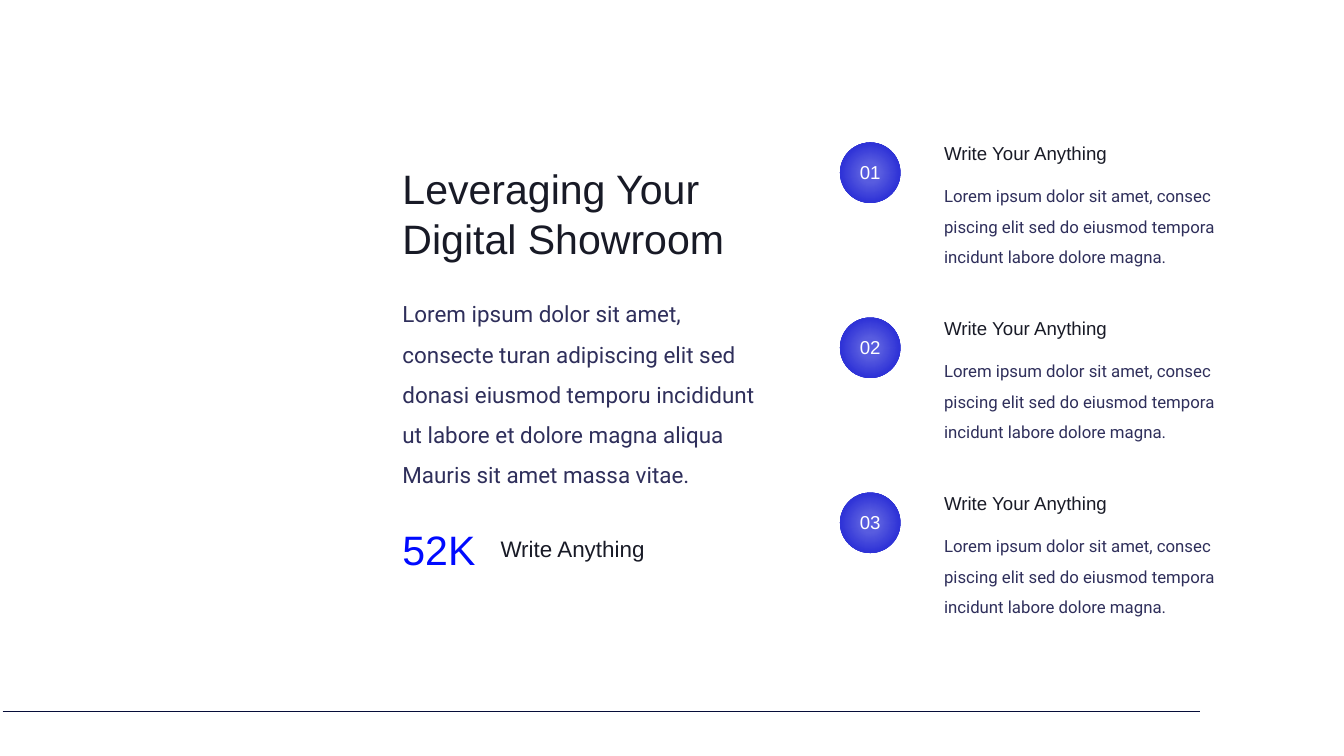
"""Build a showroom slide with a headline, a key figure and three numbered points."""
import pptx
import pptx.dml.color
import pptx.enum.shapes
import pptx.enum.text
import pptx.oxml
import pptx.oxml.ns
import pptx.util

Inches = pptx.util.Inches
RGBColor = pptx.dml.color.RGBColor
ALIGN = pptx.enum.text.PP_ALIGN

INK = RGBColor(0x18, 0x1A, 0x26)
BODY = RGBColor(0x2F, 0x2F, 0x5B)
BLUE = RGBColor(0x00, 0x0A, 0xFF)
NAVY = RGBColor(0x06, 0x0D, 0x39)
WHITE = RGBColor(0xFF, 0xFF, 0xFF)
BADGE_STOPS = [
    (0, RGBColor(0x58, 0x5C, 0xDF)),
    (23, RGBColor(0x58, 0x5C, 0xDF)),
    (69, RGBColor(0x2F, 0x33, 0xD7)),
    (97, RGBColor(0x27, 0x2C, 0xCD)),
]

HEADLINE = {"name": "Arial", "size": 44, "color": INK}
FIGURE = {"name": "Arial", "size": 44, "color": BLUE}
LABEL = {"name": "Arial", "size": 24, "color": INK}
INTRO = {"name": "Roboto", "size": 24, "color": BODY, "line_spacing": 1.5}
POINT_TITLE = {"name": "Arial", "size": 20, "color": INK}
POINT_BODY = {"name": "Roboto", "size": 18, "color": BODY, "line_spacing": 1.5}
NUMBER = {"name": "Arial", "size": 20, "color": WHITE, "alignment": ALIGN.CENTER}


def add_text(shapes, left, top, width, height, text, style):
    box = shapes.add_textbox(Inches(left), Inches(top), Inches(width), Inches(height))
    box.text_frame.word_wrap = True
    para = box.text_frame.paragraphs[0]
    span = para.add_run()
    span.text = text
    for key, value in style.items():
        if key == "color":
            span.font.color.rgb = value
        elif key == "size":
            span.font.size = pptx.util.Pt(value)
        elif key == "name":
            span.font.name = value
        else:
            setattr(para, key, value)


def fill_radial(shape, stops):
    stop_xml = "".join(
        f'<a:gs pos="{position * 1000}"><a:srgbClr val="{color}"/></a:gs>'
        for position, color in stops
    )
    gradient = pptx.oxml.parse_xml(
        f'<a:gradFill {pptx.oxml.ns.nsdecls("a")} rotWithShape="1">'
        f"<a:gsLst>{stop_xml}</a:gsLst>"
        '<a:path path="circle">'
        '<a:fillToRect l="50000" t="50000" r="50000" b="50000"/>'
        "</a:path></a:gradFill>"
    )
    properties = shape._element.spPr
    properties.find(pptx.oxml.ns.qn("a:prstGeom")).addnext(gradient)


deck = pptx.Presentation()
deck.slide_width = Inches(20)
deck.slide_height = Inches(11.25)
page = deck.slides.add_slide(deck.slide_layouts[6])
page.background.fill.solid()
page.background.fill.fore_color.rgb = WHITE

footer_rule = page.shapes.add_connector(
    pptx.enum.shapes.MSO_CONNECTOR.STRAIGHT,
    Inches(0.04), Inches(10.59), Inches(17.86), Inches(10.59),
)
footer_rule.line.color.rgb = NAVY
footer_rule.line.width = pptx.util.Pt(0.5)
footer_rule._element.spPr.append(
    pptx.oxml.parse_xml(f'<a:effectLst {pptx.oxml.ns.nsdecls("a")}/>')
)

point_text = (
    "Lorem ipsum dolor sit amet, consec piscing elit sed do eiusmod tempora "
    "incidunt labore dolore magna."
)
for index in range(3):
    top = 2.12 + index * 2.605
    group = page.shapes.add_group_shape()
    badge = group.shapes.add_shape(
        pptx.enum.shapes.MSO_SHAPE.OVAL,
        Inches(12.5), Inches(top), Inches(0.9), Inches(0.9),
    )
    badge.shadow.inherit = False
    badge.line.fill.background()
    fill_radial(badge, BADGE_STOPS)
    add_text(group.shapes, 12.5, top + 0.23, 0.9, 0.44, f"{index + 1:02d}", NUMBER)
    add_text(page.shapes, 13.95, top + 0.45, 4.87, 1.41, point_text, POINT_BODY)
    add_text(page.shapes, 13.95, top - 0.06, 4.52, 0.44, "Write Your Anything", POINT_TITLE)

intro_text = (
    "Lorem ipsum dolor sit amet, consecte turan adipiscing elit sed donasi eiusmod "
    "temporu incididunt ut labore et dolore magna aliqua Mauris sit amet massa vitae."
)
add_text(page.shapes, 5.89, 2.39, 5.91, 1.58, "Leveraging Your Digital Showroom", HEADLINE)
add_text(page.shapes, 5.89, 4.22, 5.67, 3.07, intro_text, INTRO)
add_text(page.shapes, 5.89, 7.76, 2.57, 0.84, "52K", FIGURE)
add_text(page.shapes, 7.35, 7.92, 3.76, 0.5, "Write Anything", LABEL)

deck.save("out.pptx")
